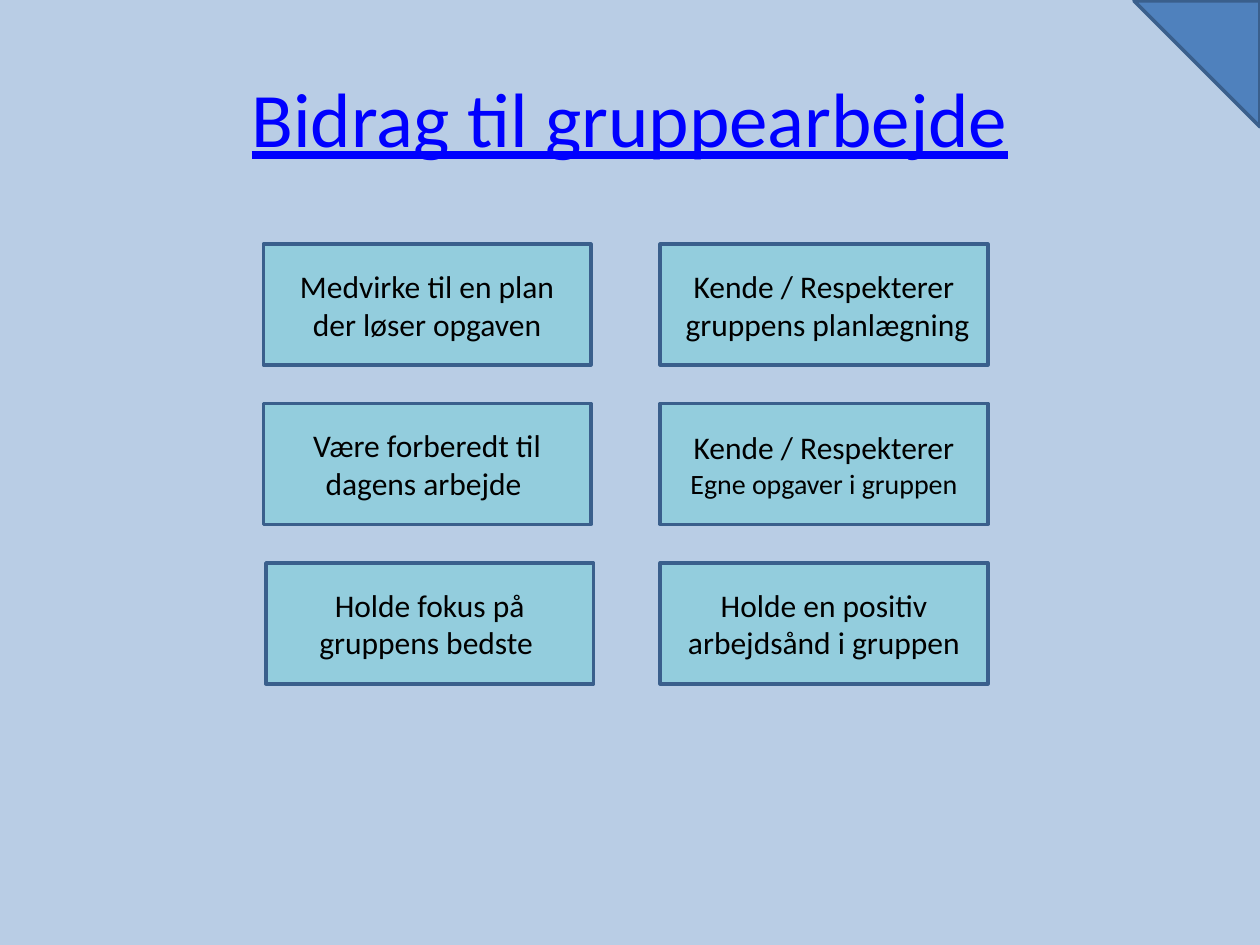
from pptx import Presentation
from pptx.dml.color import RGBColor
from pptx.enum.shapes import MSO_SHAPE
from pptx.enum.text import MSO_ANCHOR, PP_ALIGN
from pptx.util import Pt

BACKGROUND = RGBColor(0xB9, 0xCD, 0xE5)
TITLE_BLUE = RGBColor(0x00, 0x00, 0xFF)
BOX_FILL = RGBColor(0x93, 0xCD, 0xDD)
CORNER_FILL = RGBColor(0x4F, 0x81, 0xBD)
OUTLINE = RGBColor(0x3A, 0x5F, 0x8C)
BLACK = RGBColor(0x00, 0x00, 0x00)


def write_text(shape, lines, sizes, color=BLACK, underline=None):
    """Write one centred paragraph for each line, at its own size."""
    frame = shape.text_frame
    frame.word_wrap = True
    frame.vertical_anchor = MSO_ANCHOR.MIDDLE
    for i, (line, size) in enumerate(zip(lines, sizes)):
        paragraph = frame.paragraphs[0] if i == 0 else frame.add_paragraph()
        paragraph.alignment = PP_ALIGN.CENTER
        run = paragraph.add_run()
        run.text = line
        run.font.name = "Calibri"
        run.font.size = Pt(size)
        run.font.color.rgb = color
        run.font.underline = underline


def add_outlined(kind, left, top, width, height, fill):
    shape = slide.shapes.add_shape(kind, Pt(left), Pt(top), Pt(width), Pt(height))
    shape.shadow.inherit = False
    shape.fill.solid()
    shape.fill.fore_color.rgb = fill
    shape.line.color.rgb = OUTLINE
    shape.line.width = Pt(2)
    return shape


prs = Presentation()
prs.slide_width, prs.slide_height = Pt(720), Pt(540)
slide = prs.slides.add_slide(prs.slide_layouts[6])
slide.background.fill.solid()
slide.background.fill.fore_color.rgb = BACKGROUND

# Title
title = slide.shapes.add_textbox(Pt(36), Pt(21.6), Pt(648), Pt(90))
write_text(title, ["Bidrag til gruppearbejde"], [44], color=TITLE_BLUE, underline=True)

# Contributions: left position, then the lines and sizes of each box
contributions = [
    [(150.5, ["Medvirke til en plan der løser opgaven"], [18]),
     (377.3, ["Kende / Respekterer", " gruppens planlægning"], [18, 18])],
    [(150.5, ["Være forberedt til dagens arbejde "], [18]),
     (377.3, ["Kende / Respekterer", "Egne opgaver i gruppen"], [18, 16])],
    [(152, ["Holde fokus på gruppens bedste "], [18]),
     (377.3, ["Holde en positiv arbejdsånd i gruppen"], [18])],
]
FIRST_TOP, ROW_STEP = 139.5, 91.1
for row, boxes in enumerate(contributions):
    for left, lines, sizes in boxes:
        box = add_outlined(MSO_SHAPE.RECTANGLE, left, FIRST_TOP + row * ROW_STEP,
                           187.2, 69.1, BOX_FILL)
        write_text(box, lines, sizes)

# Corner triangle, right angle at the top right
corner = add_outlined(MSO_SHAPE.RIGHT_TRIANGLE, 648, 0.5, 72, 72, CORNER_FILL)
corner.rotation = 180

prs.save("out.pptx")
